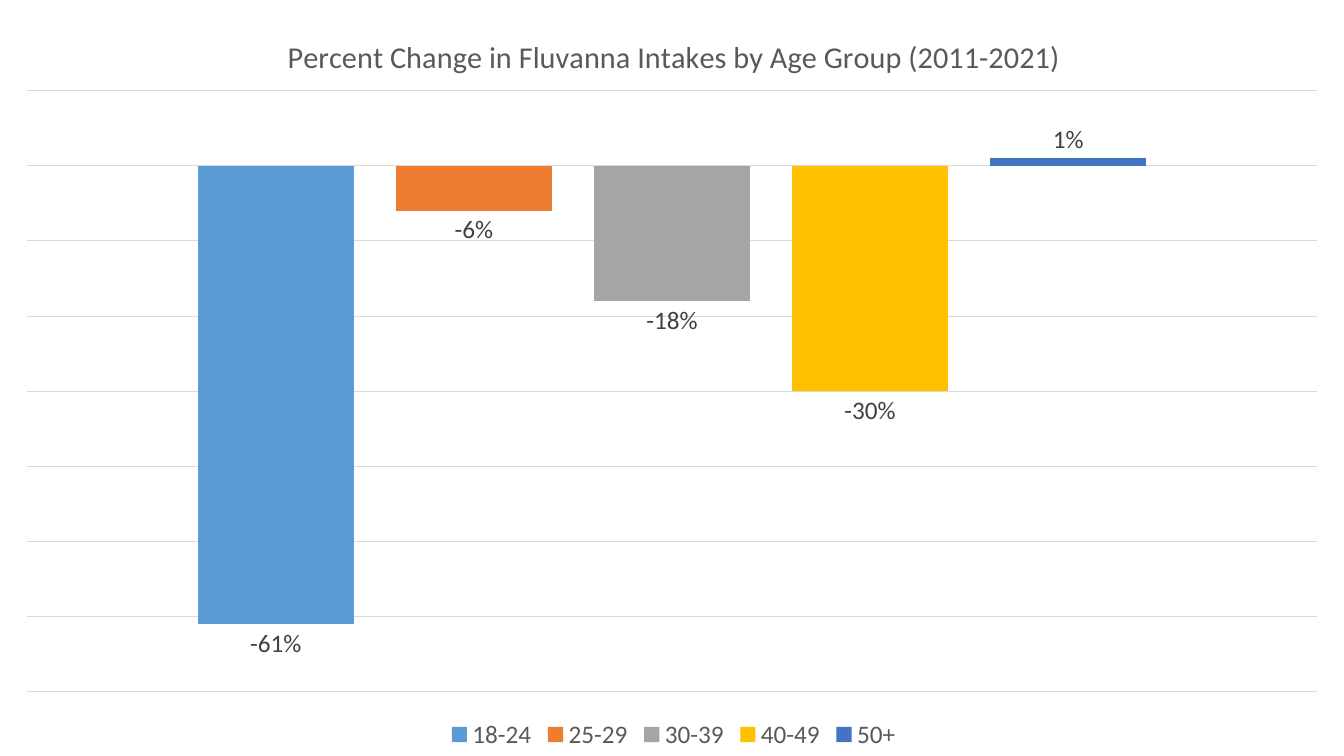
from lxml.etree import SubElement
from pptx import Presentation
from pptx.chart.data import CategoryChartData
from pptx.dml.color import RGBColor
from pptx.enum.chart import XL_CHART_TYPE as ChartType
from pptx.enum.chart import XL_LABEL_POSITION as LabelPosition
from pptx.enum.chart import XL_LEGEND_POSITION as LegendPosition
from pptx.oxml.ns import qn
from pptx.util import Inches, Pt

TITLE = "Percent Change in Fluvanna Intakes by Age Group (2011-2021)"
AGE_GROUPS = [
    ("18-24", -0.61, "5B9BD5"),
    ("25-29", -0.06, "ED7D31"),
    ("30-39", -0.18, "A5A5A5"),
    ("40-49", -0.30, "FFC000"),
    ("50+", 0.01, "4472C4"),
]
FONT = "Calibri"
GREY, DARK, GRID = "595959", "404040", "D9D9D9"

# Shares of the chart's width and height
TITLE_PLACE = {"x": 0.21, "y": 0.04}
PLOT_PLACE = {"x": 0.02, "y": 0.12, "w": 0.96, "h": 0.795}
LEGEND_PLACE = {"x": 0.33, "y": 0.95}


def color(hex_text):
    return RGBColor.from_string(hex_text)


def style(font, size, hex_text):
    font.name, font.size, font.bold = FONT, Pt(size), False
    font.color.rgb = color(hex_text)


def place(element, shares, inner=False):
    """Give a chart part a manual layout in shares of the chart's size."""
    layout = element.get_or_add_layout() if hasattr(element, "get_or_add_layout") else element.find(qn("c:layout"))
    if layout is None:
        layout = SubElement(element, qn("c:layout"))
        element.insert(0, layout)
    for child in list(layout):
        layout.remove(child)
    manual = SubElement(layout, qn("c:manualLayout"))
    if inner:
        SubElement(manual, qn("c:layoutTarget"), val="inner")
    for side in "xy":
        SubElement(manual, qn(f"c:{side}Mode"), val="edge")
    for side, share in shares.items():
        SubElement(manual, qn(f"c:{side}"), val=str(share))


deck = Presentation()
deck.slide_width, deck.slide_height = Inches(13.33), Inches(7.5)
page = deck.slides.add_slide(deck.slide_layouts[6])

data = CategoryChartData(number_format="0%")
data.categories = ["1"]
for name, change, _ in AGE_GROUPS:
    data.add_series(name, [change])
chart = page.shapes.add_chart(
    ChartType.COLUMN_CLUSTERED, 0, 0, deck.slide_width, deck.slide_height, data
).chart
style(chart.font, 18, "000000")

chart.has_title = True
title = chart.chart_title
span = title.text_frame.paragraphs[0].add_run()
span.text = TITLE
style(span.font, 21.6, GREY)
title.include_in_layout = False

chart.has_legend = True
legend = chart.legend
legend.position = LegendPosition.BOTTOM
legend.include_in_layout = False
style(legend.font, 18, GREY)

chart.category_axis.visible = False
axis = chart.value_axis
axis.visible = False
axis.minimum_scale, axis.maximum_scale, axis.major_unit = -0.7, 0.1, 0.1
axis.has_major_gridlines = True
grid = axis.major_gridlines.format.line
grid.color.rgb, grid.width = color(GRID), Pt(0.75)

plot = chart.plots[0]
plot.vary_by_categories = False
plot.gap_width, plot.overlap = 219, -27
for series, (_, _, fill) in zip(plot.series, AGE_GROUPS):
    series.invert_if_negative = False
    series.format.fill.solid()
    series.format.fill.fore_color.rgb = color(fill)
    labels = series.data_labels
    labels.show_value = True
    labels.number_format, labels.number_format_is_linked = "0%", False
    labels.position = LabelPosition.OUTSIDE_END
    style(labels.font, 18, DARK)

# The layout of the title and the legend follows their first child
chart_space = chart.element
plot_area = next(chart_space.iter(qn("c:plotArea")))
place(plot_area, PLOT_PLACE, inner=True)
for tag, before, shares in (
    ("c:title", "c:tx", TITLE_PLACE),
    ("c:legend", "c:legendPos", LEGEND_PLACE),
):
    part = next(chart_space.iter(qn(tag)))
    place(part, shares)
    part.find(qn(before)).addnext(part.find(qn("c:layout")))

deck.save("out.pptx")
